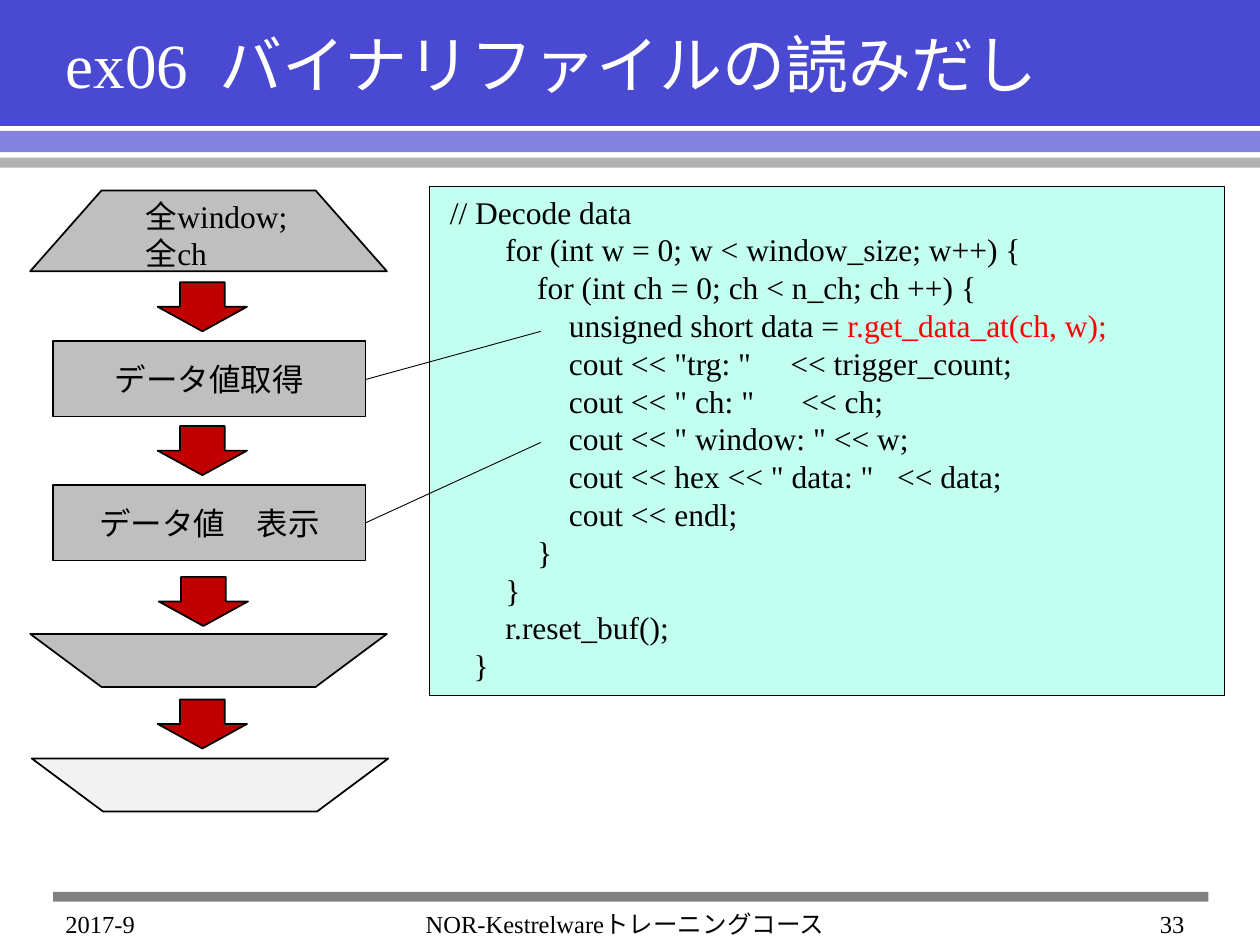
"""Build the slide on reading a binary file: a loop flowchart beside its code."""
from dataclasses import dataclass

from lxml.etree import SubElement
from pptx import Presentation
from pptx.dml.color import RGBColor
from pptx.enum.shapes import MSO_CONNECTOR, MSO_SHAPE as Preset
from pptx.enum.text import MSO_ANCHOR as Anchor, MSO_AUTO_SIZE as AutoSize, PP_ALIGN as Align
from pptx.oxml.ns import qn
from pptx.util import Cm, Pt

FONT = "Times New Roman"
BLACK, WHITE, RED = "000000", "FFFFFF", "FF0000"
GREY, PALE, DARK_RED, MINT = "BFBFBF", "F2F2F2", "C00000", "C2FFF0"
SPACE_WIDTH = 0.16


@dataclass
class Area:
    left: float
    top: float
    width: float
    height: float

    def lengths(self) -> list:
        return [Cm(n) for n in (self.left, self.top, self.width, self.height)]


@dataclass
class Block:
    preset: Preset
    area: Area
    fill: str
    line: float = 1
    text: str = ""
    flipped: bool = False


@dataclass
class Label:
    area: Area
    text: str
    size: int = 14
    align: Align = Align.LEFT


@dataclass
class CodeLine:
    indent: int
    text: str
    highlight: str = ""


def color(value: str) -> RGBColor:
    return RGBColor.from_string(value)


def format_span(span, size: float, tint: str = BLACK) -> None:
    span.font.name = FONT
    span.font.size = Pt(size)
    span.font.color.rgb = color(tint)


def write(box, text: str, size: float, align: Align, anchor: Anchor, tint: str = BLACK) -> None:
    frame = box.text_frame
    frame.text = text
    frame.word_wrap = True
    frame.auto_size = AutoSize.NONE
    frame.vertical_anchor = anchor
    for para in frame.paragraphs:
        para.alignment = align
        for span in para.runs:
            format_span(span, size, tint)


def draw_block(page, block: Block):
    shape = page.shapes.add_shape(block.preset, *block.area.lengths())
    shape.shadow.inherit = False
    shape.fill.solid()
    shape.fill.fore_color.rgb = color(block.fill)
    if block.line:
        shape.line.color.rgb = color(BLACK)
        shape.line.width = Pt(block.line)
    else:
        shape.line.fill.background()
    if block.flipped:
        shape.element.spPr.get_or_add_xfrm().set("flipV", "1")
    if block.text:
        write(shape, block.text, 18, Align.CENTER, Anchor.MIDDLE)
    return shape


def draw_label(page, label: Label) -> None:
    box = page.shapes.add_textbox(*label.area.lengths())
    write(box, label.text, label.size, label.align, Anchor.TOP)


def draw_title(page, text: str) -> None:
    title = page.shapes.title
    title.left, title.top, title.width, title.height = Area(1.07, 0, 23.65, 2.54).lengths()
    write(title, text, 36, Align.LEFT, Anchor.MIDDLE, WHITE)
    title.element.getparent().append(title.element)


def draw_code(page, area: Area, lines: list[CodeLine]) -> None:
    box = draw_block(page, Block(Preset.RECTANGLE, area, MINT, 0.75))
    frame = box.text_frame
    write(box, "\n".join(line.text for line in lines), 18, Align.LEFT, Anchor.TOP)
    for para, line in zip(frame.paragraphs, lines):
        properties = para._p.get_or_add_pPr()
        properties.set("marL", str(Cm(line.indent * SPACE_WIDTH)))
        properties.set("indent", "0")
        if line.highlight:
            span = para.add_run()
            span.text = line.highlight
            format_span(span, 18, RED)


def draw_pointer(page, start: tuple[float, float], end: tuple[float, float]) -> None:
    points = [Cm(n) for n in start + end]
    pointer = page.shapes.add_connector(MSO_CONNECTOR.STRAIGHT, *points)
    pointer.line.color.rgb = color(BLACK)
    pointer.line.width = Pt(0.5)
    SubElement(pointer.element.spPr, qn("a:effectLst"))


BANDS = [
    (Area(0, 0, 25.4, 2.54), "4949D1"),
    (Area(0, 2.64, 25.4, 0.43), "8484E0"),
    (Area(0, 3.18, 25.4, 0.2), "B2B2B2"),
    (Area(1.07, 17.98, 23.29, 0.2), "808080"),
]
FOOTERS = [
    Label(Area(1.07, 18.21, 5.28, 0.84), "2017-9"),
    Label(Area(7.9, 18.21, 9.4, 0.84), "NOR-Kestrelwareトレーニングコース", align=Align.CENTER),
    Label(Area(18.85, 18.21, 5.28, 0.84), "33", align=Align.RIGHT),
]
LOOP_LABEL = Label(Area(2.69, 3.84, 3.71, 1.8), "全window;\n全ch", 18)
LOOP_ENDS = [
    Block(Preset.FLOWCHART_MANUAL_OPERATION, Area(0.61, 3.84, 7.19, 1.63), GREY, flipped=True),
    Block(Preset.FLOWCHART_MANUAL_OPERATION, Area(0.61, 12.78, 7.19, 1.07), GREY),
    Block(Preset.FLOWCHART_MANUAL_OPERATION, Area(0.64, 15.29, 7.19, 1.07), PALE),
]
STEPS = [(6.88, "データ値取得"), (9.78, "データ値　表示")]
ARROWS = [(3.18, 5.69), (3.18, 8.59), (3.2, 11.63), (3.18, 14.1)]
POINTERS = [((7.37, 7.65), (10.9, 6.68)), ((7.37, 10.54), (10.9, 8.92))]
CODE = [
    CodeLine(1, "// Decode data"),
    CodeLine(8, "for (int w = 0; w < window_size; w++) {"),
    CodeLine(12, "for (int ch = 0; ch < n_ch; ch ++) {"),
    CodeLine(16, "unsigned short data = ", "r.get_data_at(ch, w);"),
    CodeLine(16, 'cout << "trg: "     << trigger_count;'),
    CodeLine(16, 'cout << " ch: "      << ch;'),
    CodeLine(16, 'cout << " window: " << w;'),
    CodeLine(16, 'cout << hex << " data: "   << data;'),
    CodeLine(16, "cout << endl;"),
    CodeLine(12, "}"),
    CodeLine(8, "}"),
    CodeLine(8, "r.reset_buf();"),
    CodeLine(4, "}"),
]


def main() -> None:
    deck = Presentation()
    deck.slide_width, deck.slide_height = Cm(25.4), Cm(19.05)
    page = deck.slides.add_slide(deck.slide_layouts[5])
    for area, fill in BANDS:
        draw_block(page, Block(Preset.RECTANGLE, area, fill, 0))
    draw_title(page, "ex06  バイナリファイルの読みだし")
    for footer in FOOTERS:
        draw_label(page, footer)
    draw_code(page, Area(8.66, 3.76, 16.03, 10.26), CODE)
    for top, text in STEPS:
        draw_block(page, Block(Preset.RECTANGLE, Area(1.07, top, 6.3, 1.52), GREY, text=text))
    for loop_end in LOOP_ENDS:
        draw_block(page, loop_end)
    draw_label(page, LOOP_LABEL)
    for left, top in ARROWS:
        draw_block(page, Block(Preset.DOWN_ARROW, Area(left, top, 1.8, 0.99), DARK_RED))
    for start, end in POINTERS:
        draw_pointer(page, start, end)
    deck.save("out.pptx")


if __name__ == "__main__":
    main()
